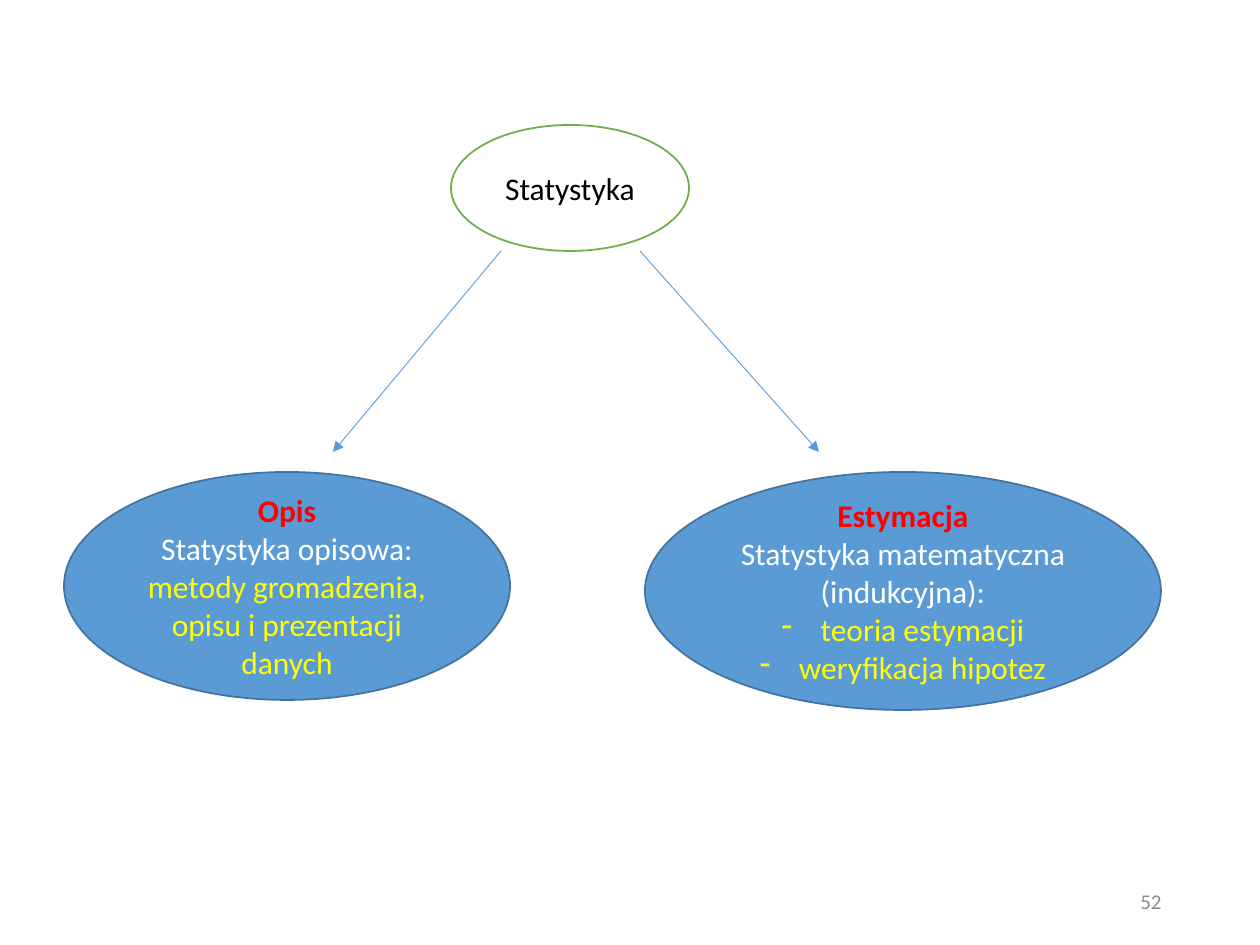
from lxml import etree
from pptx import Presentation
from pptx.dml.color import RGBColor
from pptx.enum.shapes import MSO_CONNECTOR, MSO_SHAPE
from pptx.enum.text import MSO_ANCHOR, PP_ALIGN
from pptx.oxml.ns import qn
from pptx.util import Pt

ELLIPSE = MSO_SHAPE.OVAL
STRAIGHT = MSO_CONNECTOR.STRAIGHT
MIDDLE = MSO_ANCHOR.MIDDLE
CENTER, RIGHT = PP_ALIGN.CENTER, PP_ALIGN.RIGHT
EMU_PER_INCH, PX_PER_INCH = 914400, 126
BULLET_INDENT = 39

COLORS = {
    "white": "FFFFFF", "black": "000000", "grey": "8C8C8C", "green": "70AD47",
    "blue": "5B9BD5", "outline": "43739E", "red": "FF0000", "yellow": "FFFF00",
}
HEADING = {"color": "red", "bold": True}
SUBJECT = {"color": "white"}
DETAIL = {"color": "yellow"}
BULLET = {"color": "yellow", "bullet": "-"}

NODES = [
    ((451, 125, 238, 126), "white", "green", [("Statystyka", {"color": "black"})]),
    ((64, 472, 446, 228), "blue", "outline", [
        ("Opis", HEADING),
        ("Statystyka opisowa:", SUBJECT),
        ("metody gromadzenia, opisu i prezentacji danych", DETAIL),
    ]),
    ((645, 472, 516, 238), "blue", "outline", [
        ("Estymacja", HEADING),
        ("Statystyka matematyczna (indukcyjna):", SUBJECT),
        ("teoria estymacji", BULLET),
        ("weryfikacja hipotez", BULLET),
    ]),
]
ARROWS = [(501, 251, 333, 452), (640, 251, 819, 452)]
NUMBER_BOX = (890, 876, 284, 50)


def px(*lengths):
    """Turn pixel lengths into EMU."""
    return [round(n * EMU_PER_INCH / PX_PER_INCH) for n in lengths]


def rgb(name):
    """Return a named colour."""
    return RGBColor.from_string(COLORS[name])


def add_bullet(p, char):
    """Give a paragraph a hanging bullet."""
    pPr = p._p.get_or_add_pPr()
    indent = px(BULLET_INDENT)[0]
    pPr.set("marL", str(indent))
    pPr.set("indent", str(-indent))
    etree.SubElement(pPr, qn("a:buFontTx"))
    etree.SubElement(pPr, qn("a:buChar"), char=char)


def write_text(s, lines, size=18, align=CENTER):
    """Fill a shape with formatted paragraphs."""
    tf = s.text_frame
    tf.word_wrap = True
    tf.vertical_anchor = MIDDLE
    for i, (text, style) in enumerate(lines):
        p = tf.add_paragraph() if i else tf.paragraphs[0]
        p.alignment = align
        r = p.add_run()
        r.text = text
        values = {"name": "Calibri", "size": Pt(size), "bold": style.get("bold", False)}
        for key, value in values.items():
            setattr(r.font, key, value)
        r.font.color.rgb = rgb(style["color"])
        if "bullet" in style:
            add_bullet(p, style["bullet"])


def add_node(slide, box, fill, line, lines):
    """Draw an ellipse with its text."""
    s = slide.shapes.add_shape(ELLIPSE, *px(*box))
    s.shadow.inherit = False
    s.fill.solid()
    s.fill.fore_color.rgb = rgb(fill)
    s.line.color.rgb = rgb(line)
    s.line.width = Pt(1)
    write_text(s, lines)


def add_arrow(slide, ends):
    """Draw a thin line with an arrowhead at its end."""
    c = slide.shapes.add_connector(STRAIGHT, *px(*ends))
    c.line.color.rgb = rgb("blue")
    c.line.width = Pt(0.5)
    etree.SubElement(c.line._get_or_add_ln(), qn("a:tailEnd"), type="triangle")
    etree.SubElement(c._element.spPr, qn("a:effectLst"))


def add_number(slide, box, number):
    """Place the slide number."""
    s = slide.shapes.add_textbox(*px(*box))
    write_text(s, [(number, {"color": "grey"})], size=12, align=RIGHT)


def main():
    """Build and save the slide."""
    prs = Presentation()
    prs.slide_width, prs.slide_height = px(1260, 945)
    slide = prs.slides.add_slide(prs.slide_layouts.get_by_name("Blank"))
    add_number(slide, NUMBER_BOX, "52")
    for node in NODES:
        add_node(slide, *node)
    for ends in ARROWS:
        add_arrow(slide, ends)
    prs.save("out.pptx")


if __name__ == "__main__":
    main()
